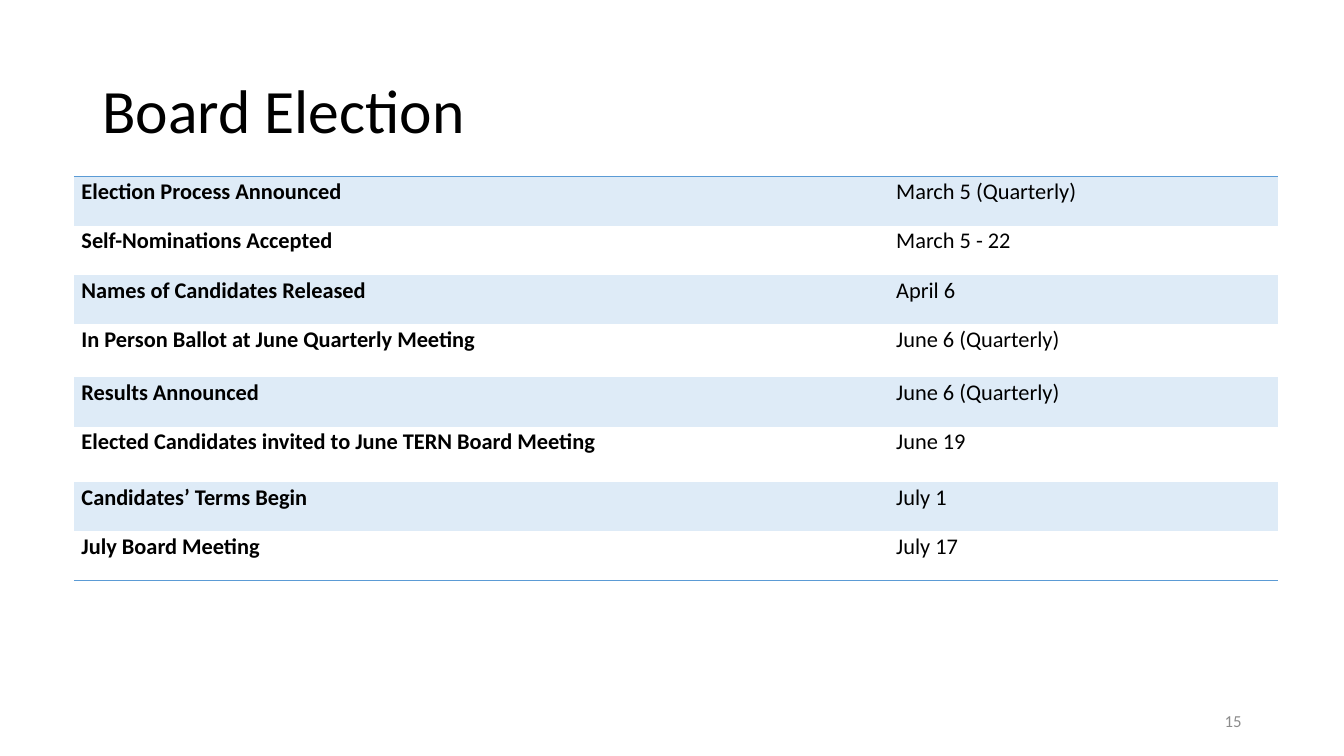
from lxml import etree
from pptx import Presentation
from pptx.dml.color import RGBColor
from pptx.enum import text
from pptx.oxml.ns import qn
from pptx.util import Pt

# Content
TITLE = "Board Election"
PAGE_NUMBER = "15"
SCHEDULE = [
    ("Election Process Announced", "March 5 (Quarterly)"),
    ("Self-Nominations Accepted", "March 5 - 22"),
    ("Names of Candidates Released", "April 6"),
    ("In Person Ballot at June Quarterly Meeting", "June 6 (Quarterly)"),
    ("Results Announced", "June 6 (Quarterly)"),
    ("Elected Candidates invited to June TERN Board Meeting", "June 19"),
    ("Candidates’ Terms Begin", "July 1"),
    ("July Board Meeting", "July 17"),
]
COLORS = {"text": "000000", "rule": "5B9BD5", "band": "DEEBF7", "number": "8C8C8C"}
FONT = "Calibri"
NO_STYLE = "{2D5ABB26-0587-4C30-8999-92F81FD0307C}"

# Layout in points
COLUMN_WIDTHS = (582, 278.4)
ROW_HEIGHT = 35.2
TALL_ROWS = {3: 38, 5: 39.5}
row_heights = [TALL_ROWS.get(i, ROW_HEIGHT) for i in range(len(SCHEDULE))]


def write(frame, words, size, color="text", bold=False, spacing=1.0,
          align=text.PP_ALIGN.LEFT):
    frame.word_wrap = True
    paragraph = frame.paragraphs[0]
    paragraph.alignment = align
    paragraph.line_spacing = spacing
    run = paragraph.add_run()
    run.text = words
    run.font.name = FONT
    run.font.size = Pt(size)
    run.font.bold = bold
    run.font.color.rgb = RGBColor.from_string(COLORS[color])


def add_rule(cell, side):
    line = etree.Element(qn(f"a:ln{side}"), w=str(Pt(1)))
    fill = etree.SubElement(line, qn("a:solidFill"))
    etree.SubElement(fill, qn("a:srgbClr"), val=COLORS["rule"])
    cell._tc.get_or_add_tcPr().insert(0, line)


deck = Presentation()
deck.slide_width, deck.slide_height = Pt(960), Pt(540)
slide = deck.slides.add_slide(deck.slide_layouts[5])

# Title
heading = slide.shapes.title
heading.left, heading.top, heading.width, heading.height = Pt(66), Pt(28.8), Pt(828), Pt(104.4)
heading.text_frame.vertical_anchor = text.MSO_ANCHOR.MIDDLE
write(heading.text_frame, TITLE, 44, spacing=0.9)

# Election schedule
schedule = slide.shapes.add_table(
    len(SCHEDULE), len(COLUMN_WIDTHS), Pt(52.8), Pt(126),
    Pt(sum(COLUMN_WIDTHS)), Pt(sum(row_heights))).table
schedule.first_row = schedule.horz_banding = False
schedule._tbl.tblPr.find(qn("a:tableStyleId")).text = NO_STYLE
for column, width in zip(schedule.columns, COLUMN_WIDTHS):
    column.width = Pt(width)
for r, (entry, height) in enumerate(zip(SCHEDULE, row_heights)):
    schedule.rows[r].height = Pt(height)
    for c, words in enumerate(entry):
        cell = schedule.cell(r, c)
        cell.margin_left = cell.margin_right = Pt(5.4)
        cell.margin_top = cell.margin_bottom = Pt(0)
        write(cell.text_frame, words, 16, bold=c == 0, spacing=1.07)
        if r % 2 == 0:
            cell.fill.solid()
            cell.fill.fore_color.rgb = RGBColor.from_string(COLORS["band"])
        else:
            cell.fill.background()
        if r == 0:
            add_rule(cell, "T")
        if r == len(SCHEDULE) - 1:
            add_rule(cell, "B")

# Page number
page_number = slide.shapes.add_textbox(Pt(678), Pt(500.5), Pt(216), Pt(28.75))
page_number.text_frame.vertical_anchor = text.MSO_ANCHOR.MIDDLE
write(page_number.text_frame, PAGE_NUMBER, 12, color="number", align=text.PP_ALIGN.RIGHT)

deck.save("out.pptx")
